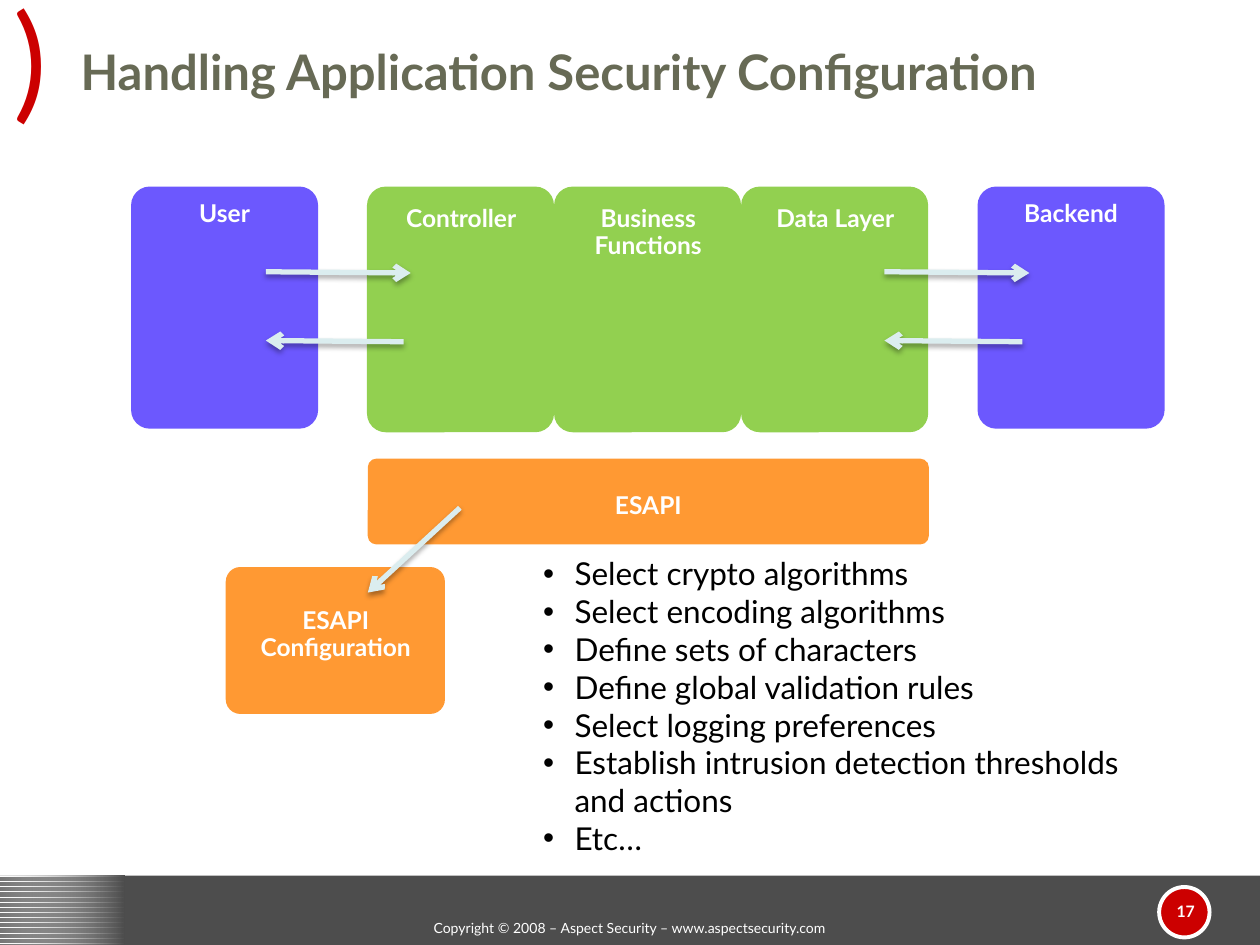
from dataclasses import dataclass

from lxml import etree
from pptx import Presentation
from pptx.dml.color import RGBColor
from pptx.enum.dml import MSO_PATTERN
from pptx.enum.shapes import MSO_CONNECTOR, MSO_SHAPE
from pptx.enum.text import MSO_ANCHOR, MSO_AUTO_SIZE, PP_ALIGN
from pptx.oxml import parse_xml
from pptx.oxml.ns import nsdecls, qn
from pptx.util import Pt

RECT, ROUND, OVAL = MSO_SHAPE.RECTANGLE, MSO_SHAPE.ROUNDED_RECTANGLE, MSO_SHAPE.OVAL
LEFT, CENTER = PP_ALIGN.LEFT, PP_ALIGN.CENTER
TOP, MIDDLE, BOTTOM = MSO_ANCHOR.TOP, MSO_ANCHOR.MIDDLE, MSO_ANCHOR.BOTTOM
NO_AUTOFIT = MSO_AUTO_SIZE.NONE
STRAIGHT = MSO_CONNECTOR.STRAIGHT

WHITE = RGBColor(0xFF, 0xFF, 0xFF)
BLACK = RGBColor(0x00, 0x00, 0x00)
GRAY = RGBColor(0x4D, 0x4D, 0x4D)
RED = RGBColor(0xCC, 0x00, 0x00)
OLIVE = RGBColor(0x67, 0x6A, 0x55)
VIOLET = RGBColor(0x6C, 0x58, 0xFE)
GREEN = RGBColor(0x92, 0xD0, 0x50)
ORANGE = RGBColor(0xFF, 0x99, 0x33)
PALE = RGBColor(0xDB, 0xED, 0xEF)
FONT = "Lato"

SHADOW = (
    f'<a:effectLst {nsdecls("a")}><a:outerShdw blurRad="{Pt(3.1)}" dist="{Pt(1.8)}" '
    'dir="5400000" rotWithShape="0"><a:srgbClr val="000000"><a:alpha val="35000"/>'
    '</a:srgbClr></a:outerShdw></a:effectLst>'
)


@dataclass
class Box:
    x: float
    y: float
    w: float
    h: float

    def lengths(self) -> list:
        return [Pt(v) for v in (self.x, self.y, self.w, self.h)]


@dataclass
class Block:
    text: str
    box: Box
    label: Box
    color: RGBColor
    anchor: MSO_ANCHOR = TOP


@dataclass
class Arrow:
    x1: float
    y1: float
    x2: float
    y2: float


def write(sp, text, *, size, color=WHITE, bold=False, align=CENTER, anchor=TOP,
          wrap=True, inset=None, spacing=None, bullet=False):
    tf = sp.text_frame
    tf.auto_size = NO_AUTOFIT
    tf.word_wrap = wrap
    tf.vertical_anchor = anchor
    if inset is not None:
        tf.margin_left = tf.margin_right = tf.margin_top = tf.margin_bottom = Pt(inset)
    tf.text = text
    for p in tf.paragraphs:
        if bullet:
            pPr = p._p.get_or_add_pPr()
            pPr.set("marL", str(Pt(18)))
            pPr.set("indent", str(-Pt(18)))
            etree.SubElement(pPr, qn("a:buFont")).set("typeface", "Arial")
            etree.SubElement(pPr, qn("a:buChar")).set("char", "•")
        p.alignment = align
        p.space_before = Pt(0)
        if spacing:
            p.line_spacing = spacing
        for r in p.runs:
            r.font.name = FONT
            r.font.size = Pt(size)
            r.font.bold = bold
            r.font.color.rgb = color


def add_box(shapes, kind: MSO_SHAPE, box: Box, color: RGBColor):
    sp = shapes.add_shape(kind, *box.lengths())
    sp.shadow.inherit = False
    sp.fill.solid()
    sp.fill.fore_color.rgb = color
    sp.line.fill.background()
    if kind == ROUND:
        sp.adjustments[0] = 0.1
    return sp


def add_label(shapes, text: str, box: Box, **fmt):
    write(shapes.add_textbox(*box.lengths()), text, **fmt)


def add_block(shapes, b: Block):
    group = shapes.add_group_shape()
    add_box(group.shapes, ROUND, b.box, b.color)
    add_label(group.shapes, b.text, b.label, size=14, bold=True, anchor=b.anchor,
              inset=7.2, spacing=0.9)


def add_arrow(shapes, a: Arrow):
    line = shapes.add_connector(STRAIGHT, Pt(a.x1), Pt(a.y1), Pt(a.x2), Pt(a.y2))
    line.line.color.rgb = PALE
    line.line.width = Pt(3)
    etree.SubElement(line.line._get_or_add_ln(), qn("a:tailEnd")).set("type", "arrow")
    line._element.spPr.append(parse_xml(SHADOW))


def add_footer(shapes):
    add_box(shapes, RECT, Box(0, 500.4, 720, 40), GRAY)
    corner = Box(0, 500.4, 71.3, 39.6)
    stripes = add_box(shapes, RECT, corner, GRAY)
    stripes.fill.patterned()
    stripes.fill.pattern = MSO_PATTERN.DARK_HORIZONTAL
    stripes.fill.fore_color.rgb = GRAY
    stripes.fill.back_color.rgb = WHITE
    fade = add_box(shapes, RECT, corner, GRAY)
    fade.fill.gradient()
    fade.fill.gradient_angle = 0
    for stop, color in zip(fade.fill.gradient_stops, (WHITE, GRAY)):
        stop.color.rgb = color
    first = fade._element.spPr.find(".//" + qn("a:srgbClr"))
    etree.SubElement(first, qn("a:alpha")).set("val", "23000")

    badge = add_box(shapes, OVAL, Box(662.4, 506.9, 28.8, 28.8), RED)
    badge.line.color.rgb = WHITE
    badge.line.width = Pt(2.25)
    add_label(shapes, ")", Box(0.7, -14.4, 41, 93.6), size=72, color=RED,
              align=LEFT, wrap=False)
    add_label(shapes, "Copyright © 2008 – Aspect Security – www.aspectsecurity.com",
              Box(0, 522, 720, 18), size=8)
    add_label(shapes, "17", Box(662.4, 506.2, 30.2, 28.8), size=9, bold=True, anchor=MIDDLE)


def main():
    prs = Presentation()
    prs.slide_width, prs.slide_height = Pt(720), Pt(540)
    s = prs.slides.add_slide(prs.slide_layouts[1])
    shapes = s.shapes

    title, body = s.placeholders
    for sp, box in ((title, Box(38.9, 12.2, 681.1, 49)), (body, Box(303.1, 313.2, 360, 181.4))):
        sp.left, sp.top, sp.width, sp.height = box.lengths()
    write(title, "Handling Application Security Configuration", size=28, color=OLIVE,
          bold=True, align=LEFT, anchor=BOTTOM)
    items = (
        "Select crypto algorithms",
        "Select encoding algorithms",
        "Define sets of characters",
        "Define global validation rules",
        "Select logging preferences",
        "Establish intrusion detection thresholds and actions",
        "Etc…",
    )
    write(body, "\n".join(items), size=18, color=BLACK, align=LEFT, bullet=True)

    add_footer(shapes)

    top, width = 106.6, 106.9
    for text, x in (("User", 74.9), ("Backend", 558.6)):
        sp = add_box(shapes, ROUND, Box(x, top, width, 138.4), VIOLET)
        write(sp, text, size=14, bold=True)

    for i, text in enumerate(("Controller", "Business Functions", "Data Layer")):
        x = 209.7 + i * width
        add_block(shapes, Block(text, Box(x, top, width, 140.4),
                                Box(x + 0.4, 110.9, width, 132.5), GREEN))
    add_block(shapes, Block("ESAPI Configuration", Box(129, 324, 125.3, 84),
                            Box(129.6, 323.3, 124.6, 79.2), ORANGE, MIDDLE))
    add_block(shapes, Block("ESAPI", Box(210.2, 262.1, 320.6, 49),
                            Box(211, 266.4, 319, 46.1), ORANGE, MIDDLE))

    for x in (151.9, 505.4):
        add_arrow(shapes, Arrow(x, 155.3, x + 82.8, 156))
        add_arrow(shapes, Arrow(x + 78.8, 195.3, x, 194.6))
    add_arrow(shapes, Arrow(262.8, 290.2, 210.2, 338.6))

    prs.save("out.pptx")


if __name__ == "__main__":
    main()
